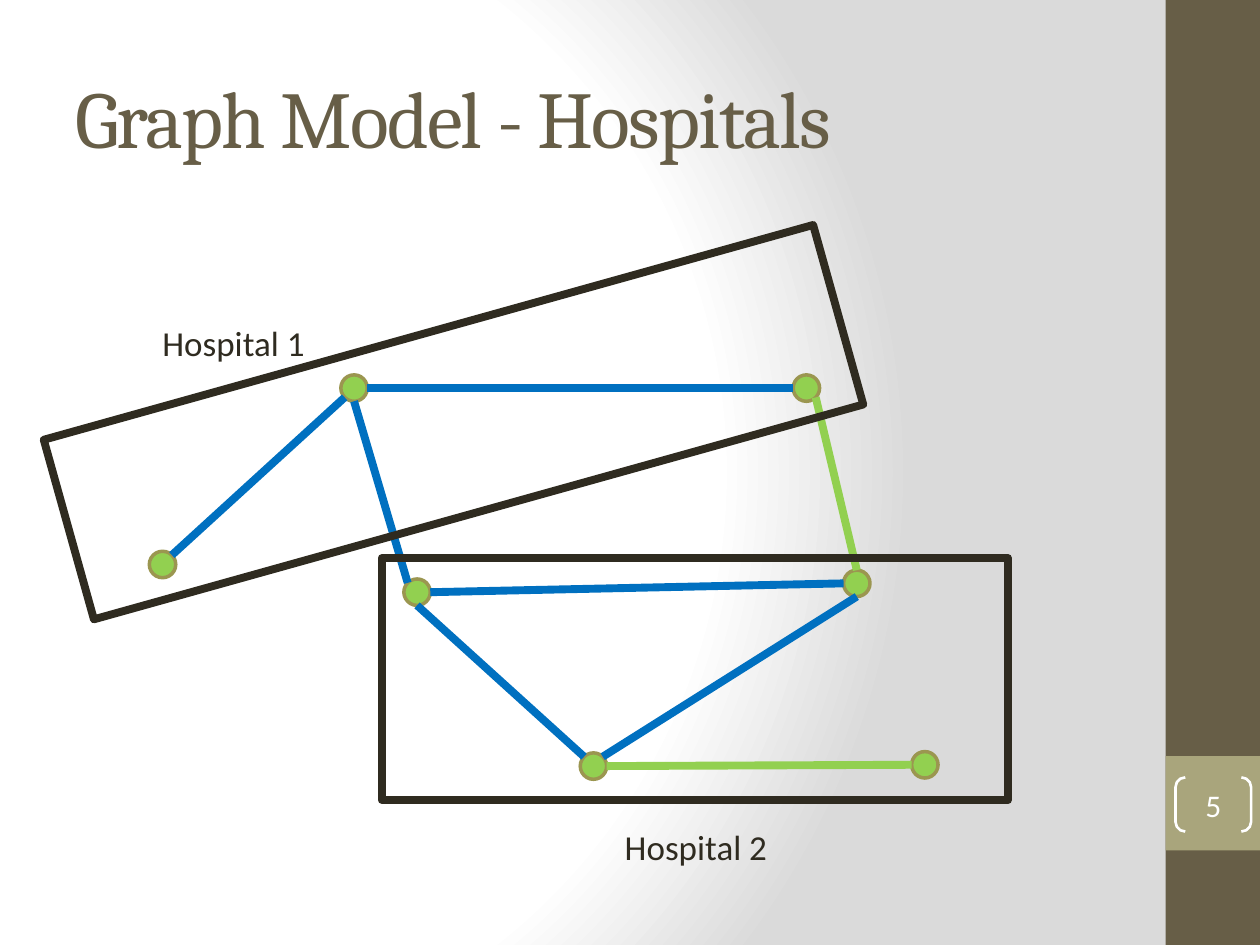
from math import sqrt

from pptx import Presentation
from pptx.dml.color import RGBColor
from pptx.enum.shapes import MSO_CONNECTOR, MSO_SHAPE
from pptx.enum.text import MSO_ANCHOR, PP_ALIGN
from pptx.oxml import parse_xml
from pptx.oxml.ns import nsdecls
from pptx.util import Inches, Pt

RECTANGLE = MSO_SHAPE.RECTANGLE
NODE = MSO_SHAPE.FLOWCHART_CONNECTOR
BRACKETS = MSO_SHAPE.DOUBLE_BRACKET
STRAIGHT = MSO_CONNECTOR.STRAIGHT
MIDDLE = MSO_ANCHOR.MIDDLE
TOP = MSO_ANCHOR.TOP
LEFT = PP_ALIGN.LEFT
CENTER = PP_ALIGN.CENTER

THEME = {
    "brown": RGBColor.from_string("675E47"),
    "khaki": RGBColor.from_string("A9A57C"),
    "olive": RGBColor.from_string("9B9650"),
    "dark": RGBColor.from_string("2F2B20"),
    "green": RGBColor.from_string("92D050"),
    "blue": RGBColor.from_string("0070C0"),
    "white": RGBColor.from_string("FFFFFF"),
    "title": {"name": "Cambria", "size": Pt(46)},
    "label": {"name": "Calibri", "size": Pt(20)},
    "number": {"name": "Calibri", "size": Pt(18)},
}


def add_box(kind, box, fill=None, line=None, width=0):
    shape = slide.shapes.add_shape(kind, *map(Inches, box))
    shape.shadow.inherit = False
    for part, color in ((shape.fill, fill), (shape.line.fill, line)):
        if color:
            part.solid()
            part.fore_color.rgb = THEME[color]
        else:
            part.background()
    if line:
        shape.line.width = Pt(width)
    return shape


def write_text(shape, text, style, color, anchor, alignment=LEFT):
    frame = shape.text_frame
    frame.word_wrap = True
    frame.vertical_anchor = anchor
    paragraph = frame.paragraphs[0]
    paragraph.alignment = alignment
    run = paragraph.add_run()
    run.text = text
    for name, value in THEME[style].items():
        setattr(run.font, name, value)
    run.font.color.rgb = THEME[color]
    return run


presentation = Presentation()
presentation.slide_width = Inches(10)
presentation.slide_height = Inches(7.5)
slide = presentation.slides.add_slide(presentation.slide_layouts[6])

stops = "".join(
    f'<a:gs pos="{position * 1000}"><a:srgbClr val="{color}"/></a:gs>'
    for position, color in ((0, "FFFFFF"), (75, "FFFFFF"), (100, "DADADA"))
)
background = parse_xml(
    f'<p:bg {nsdecls("p", "a")}><p:bgPr><a:gradFill rotWithShape="1">'
    f'<a:gsLst>{stops}</a:gsLst><a:path path="circle">'
    '<a:fillToRect l="20000" t="50000" r="100000" b="50000"/></a:path>'
    "</a:gradFill><a:effectLst/></p:bgPr></p:bg>"
)
slide.element.cSld.insert(0, background)

add_box(RECTANGLE, (9.25, 0, 0.75, 7.5), "brown")
add_box(RECTANGLE, (9.25, 6, 0.75, 0.75), "khaki")

title = slide.shapes.add_textbox(*map(Inches, (0.5, 0.3, 8.33, 1.25)))
title_run = write_text(title, "Graph Model - Hospitals", "title", "brown", MIDDLE)
title_run.font._element.set("spc", "-100")

page_number = add_box(BRACKETS, (9.33, 6.17, 0.6, 0.43), None, "white", 1.5)
page_number.adjustments[0] = 0.18
for side in ("left", "top", "right", "bottom"):
    setattr(page_number.text_frame, f"margin_{side}", 0)
write_text(page_number, "5", "number", "white", MIDDLE, CENTER)

radius = 0.105
diagonal = radius / sqrt(2)
sites = {
    "top": (0, -radius),
    "bottom": (0, radius),
    "left": (-radius, 0),
    "right": (radius, 0),
    "top left": (-diagonal, -diagonal),
    "top right": (diagonal, -diagonal),
    "bottom left": (-diagonal, diagonal),
    "bottom right": (diagonal, diagonal),
}
nodes = {
    "A": (2.81, 3.08),
    "B": (6.4, 3.08),
    "C": (3.31, 4.7),
    "D": (4.71, 6.08),
    "E": (6.8, 4.63),
    "F": (1.29, 4.48),
    "G": (7.34, 6.07),
}
for x, y in nodes.values():
    add_box(NODE, (x - radius, y - radius, 2 * radius, 2 * radius), "green", "olive", 2)

edges = [
    ("A", "right", "B", "left", "blue"),
    ("F", "top right", "A", "bottom left", "blue"),
    ("C", "top left", "A", "bottom", "blue"),
    ("E", "top", "B", "bottom right", "green"),
    ("C", "right", "E", "left", "blue"),
    ("C", "bottom", "D", "top left", "blue"),
    ("D", "top right", "E", "bottom", "blue"),
    ("G", "left", "D", "right", "green"),
]
for start, start_site, end, end_site, color in edges:
    points = [
        Inches(center + offset)
        for node, site in ((start, start_site), (end, end_site))
        for center, offset in zip(nodes[node], sites[site])
    ]
    edge = slide.shapes.add_connector(STRAIGHT, *points)
    edge.line.color.rgb = THEME[color]
    edge.line.width = Pt(4.5)
    edge._element.spPr.append(parse_xml(f'<a:effectLst {nsdecls("a")}/>'))

hospitals = [
    ("Hospital 2", (3.03, 4.43, 4.97, 1.92), 0, (4.86, 6.5, 1.61, 0.44)),
    ("Hospital 1", (0.43, 2.61, 6.34, 1.48), 344.4, (1.19, 2.5, 1.4, 0.44)),
]
for name, outline_box, rotation, label_box in hospitals:
    outline = add_box(RECTANGLE, outline_box, None, "dark", 4.5)
    outline.rotation = rotation
    label = slide.shapes.add_textbox(*map(Inches, label_box))
    write_text(label, name, "label", "dark", TOP)

presentation.save("out.pptx")
